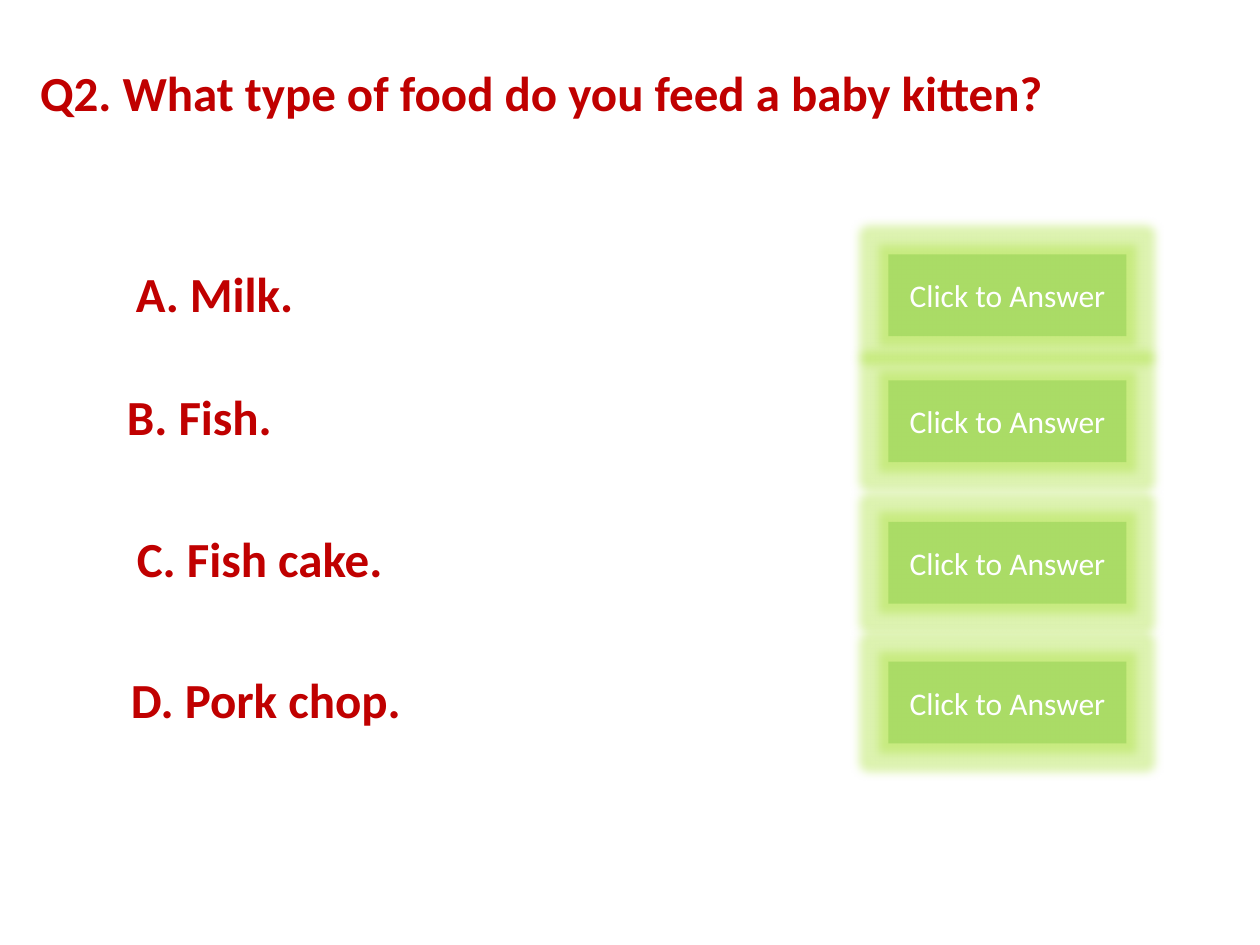
from lxml.etree import SubElement
from pptx import Presentation
from pptx.dml.color import RGBColor
from pptx.enum.shapes import MSO_SHAPE
from pptx.enum.text import MSO_ANCHOR, PP_ALIGN
from pptx.oxml import parse_xml
from pptx.oxml.ns import nsdecls, qn
from pptx.util import Cm, Pt

RED, BLUE, GREEN, GLOW, WHITE = "C00000", "054697", "92D050", "AAE13A", "FFFFFF"


def color(hex_value):
    return RGBColor.from_string(hex_value)


def write_text(shape, text, size, fill, bold=False, align=PP_ALIGN.CENTER,
               wrap=True, outline=None):
    frame = shape.text_frame
    frame.word_wrap = wrap
    frame.vertical_anchor = MSO_ANCHOR.MIDDLE
    paragraph = frame.paragraphs[0]
    paragraph.alignment = align
    run = paragraph.add_run()
    run.text = text
    run.font.name = "Calibri"
    run.font.size = Pt(size)
    run.font.bold = bold
    run.font.color.rgb = color(fill)
    if outline:
        run.font._element.insert(0, parse_xml(
            f'<a:ln {nsdecls("a")} w="{Pt(1)}"><a:solidFill>'
            f'<a:srgbClr val="{outline}"/></a:solidFill></a:ln>'))


presentation = Presentation()
presentation.slide_width = Cm(25.4)
presentation.slide_height = Cm(19.05)
slide = presentation.slides.add_slide(presentation.slide_layouts[6])

# Question and answers: text, left, top, width in centimetres
lines = [
    ("Q2. What type of food do you feed a baby kitten?", 0.56, 1.12, 20.98),
    ("A. Milk.", 2.49, 5.18, 3.73),
    ("B. Fish.", 2.31, 7.67, 3.48),
    ("C. Fish cake.", 2.51, 10.52, 5.77),
    ("D. Pork chop.", 2.39, 13.36, 6.02),
]
for text, left, top, width in lines:
    box = slide.shapes.add_textbox(Cm(left), Cm(top), Cm(width), Cm(1.45))
    write_text(box, text, 28, RED, bold=True, align=PP_ALIGN.JUSTIFY,
               wrap=False, outline=BLUE)

# One glowing answer button beside each choice
for top in (5.13, 7.67, 10.52, 13.34):
    button = slide.shapes.add_shape(
        MSO_SHAPE.RECTANGLE, Cm(17.91), Cm(top), Cm(4.8), Cm(1.65))
    button.fill.solid()
    button.fill.fore_color.rgb = color(GREEN)
    button.line.fill.background()
    button.shadow.inherit = False
    properties = button._element.spPr
    fill_color = properties.find(qn("a:solidFill")).find(qn("a:srgbClr"))
    SubElement(fill_color, qn("a:alpha"), val="54000")
    glow = SubElement(properties.find(qn("a:effectLst")), qn("a:glow"),
                      rad=str(Pt(11)))
    glow_color = SubElement(glow, qn("a:srgbClr"), val=GLOW)
    SubElement(glow_color, qn("a:alpha"), val="40000")
    write_text(button, "Click to Answer", 18, WHITE)

presentation.save("out.pptx")
